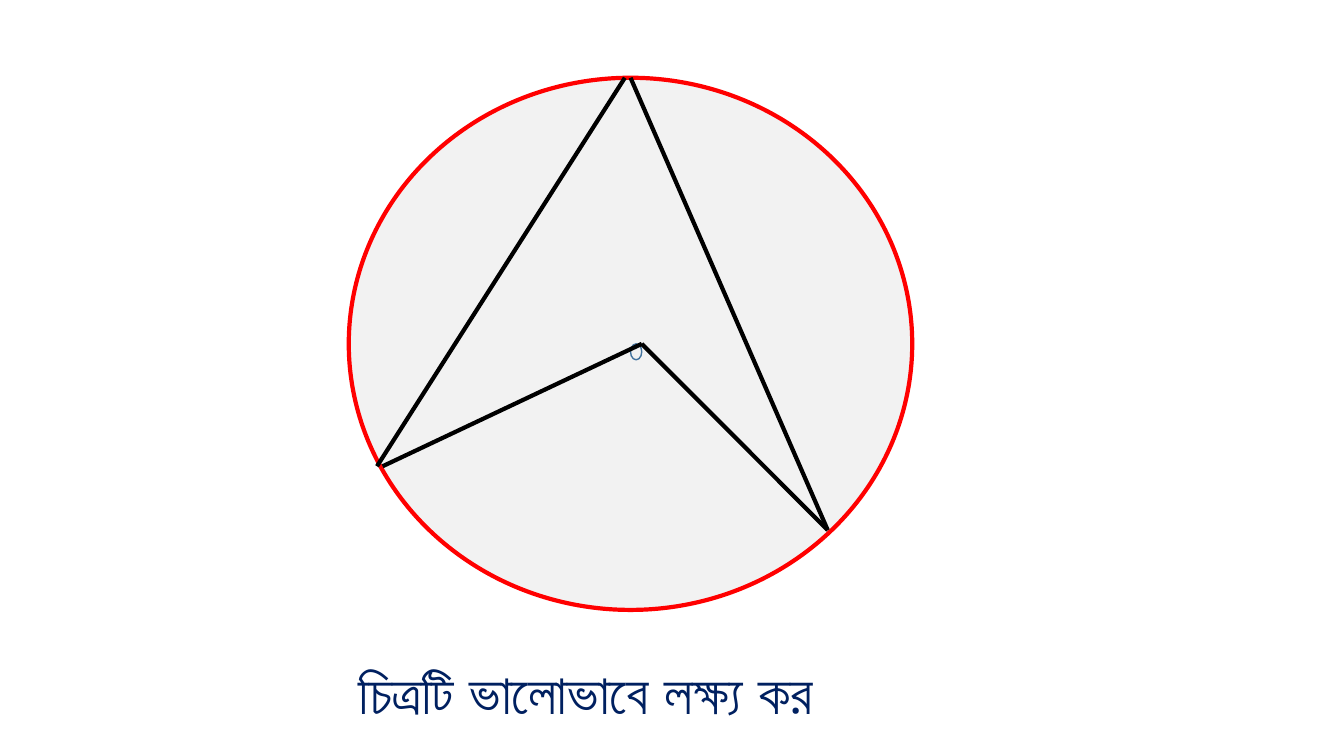
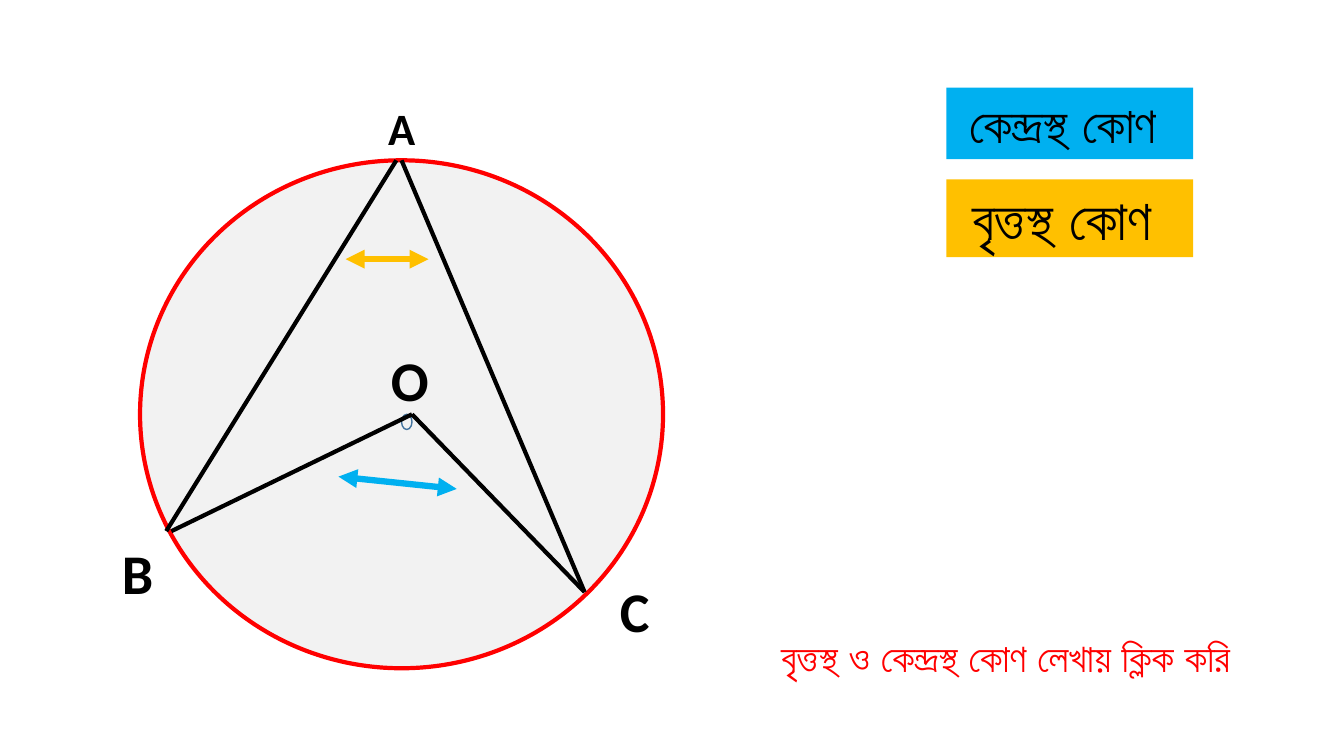
from pptx import Presentation
from pptx.dml.color import RGBColor
from pptx.enum.shapes import MSO_CONNECTOR, MSO_SHAPE
from pptx.enum.text import MSO_ANCHOR, MSO_AUTO_SIZE, PP_ALIGN
from pptx.oxml.ns import qn
from pptx.util import Cm, Pt
from lxml.etree import SubElement

FONT = "Calibri"
BLACK, RED, NAVY = "000000", "FF0000", "002060"
GREY, STEEL = "F2F2F2", "43739E"
SKY, GOLD = "00B0F0", "FFC000"


def color(hex_code):
    """Turn a hex string into a colour."""
    return RGBColor.from_string(hex_code)


def write(shape, text, size, ink=BLACK, align=PP_ALIGN.LEFT):
    """Put one bold line of text in a shape."""
    frame = shape.text_frame
    frame.text = text
    frame.word_wrap = True
    frame.auto_size = MSO_AUTO_SIZE.SHAPE_TO_FIT_TEXT
    frame.vertical_anchor = MSO_ANCHOR.TOP
    line = frame.paragraphs[0]
    line.alignment = align
    font = line.runs[0].font
    font.name, font.size, font.bold = FONT, Pt(size), True
    font.color.rgb = color(ink)


def caption(slide, box, text, size, ink):
    """Move the title placeholder to a box and fill it."""
    title = slide.shapes.title
    title.left, title.top, title.width, title.height = map(Cm, box)
    write(title, text, size, ink)


def solid(slide, kind, box, fill, edge=None, width=0):
    """Draw a filled shape with an optional outline."""
    shape = slide.shapes.add_shape(kind, *map(Cm, box))
    shape.shadow.inherit = False
    shape.fill.solid()
    shape.fill.fore_color.rgb = color(fill)
    if edge:
        shape.line.color.rgb = color(edge)
        shape.line.width = Pt(width)
    else:
        shape.line.fill.background()
    return shape


def stroke(slide, start, end, ink=BLACK, width=3, heads=False):
    """Draw a straight line, with arrowheads at both ends if asked."""
    link = slide.shapes.add_connector(
        MSO_CONNECTOR.STRAIGHT, *map(Cm, (*start, *end)))
    link.line.color.rgb = color(ink)
    link.line.width = Pt(width)
    if heads:
        for tag in ("a:headEnd", "a:tailEnd"):
            SubElement(link.line._get_or_add_ln(), qn(tag), type="triangle")
    SubElement(link._element.spPr, qn("a:effectLst"))


def circle(slide, box):
    """Draw the circle with its inscribed and central angles."""
    left, top, width, height = box

    def spot(across, down):
        """Find a point from its share of the box."""
        return left + across * width, top + down * height

    solid(slide, MSO_SHAPE.OVAL, box, GREY, RED, 3)
    core, right = spot(0.52, 0.5), spot(0.85, 0.85)
    stroke(slide, spot(0.05, 0.73), spot(0.49, 0))
    stroke(slide, spot(0.5, 0), right)
    dot = (*spot(0.5, 0.5), 0.02 * width, 0.03 * height)
    solid(slide, MSO_SHAPE.OVAL, dot, GREY, STEEL, 1)
    stroke(slide, spot(0.06, 0.73), core)
    stroke(slide, core, right)


def labels(slide, box):
    """Name the points and mark both angles of the circle."""
    left, top = box[:2]
    for name, across, down, width, size in (
            ("A", 6, -1.63, 1.4, 32), ("B", -0.71, 9.4, 1.98, 40),
            ("C", 11.84, 10.36, 1.73, 40), ("O", 6.07, 4.55, 1.98, 40)):
        place = (left + across, top + down, width, size * 0.05)
        write(slide.shapes.add_textbox(*map(Cm, place)), name, size)
    for ink, x1, y1, x2, y2 in ((GOLD, 5.18, 2.49, 7.27, 2.49),
                                (SKY, 5, 7.97, 7.98, 8.28)):
        stroke(slide, (left + x1, top + y1), (left + x2, top + y2),
               ink, 4.5, True)


def legend(slide, box):
    """Stack the two coloured angle names in a box."""
    left, top, width, gap = box
    for text, size, fill, height in (("কেন্দ্রস্থ কোণ ", 36, SKY, 1.8),
                                     ("বৃত্তস্থ কোণ ", 40, GOLD, 1.96)):
        bar = solid(slide, MSO_SHAPE.RECTANGLE, (left, top, width, height), fill)
        write(bar, text, size, align=PP_ALIGN.CENTER)
        top += height + gap


def main():
    """Build both slides and save them."""
    deck = Presentation()
    deck.slide_width, deck.slide_height = Cm(33.87), Cm(19.05)
    look, name = [deck.slides.add_slide(deck.slide_layouts[5])
                  for _ in range(2)]

    circle(look, (8.79, 1.96, 14.2, 13.41))
    caption(look, (8.79, 16.46, 13.77, 1.96),
            "চিত্রটি ভালোভাবে লক্ষ্য কর", 40, NAVY)

    ring = (3.53, 4.04, 13.18, 12.8)
    circle(name, ring)
    labels(name, ring)
    legend(name, (23.85, 2.21, 6.22, 0.51))
    caption(name, (19.43, 15.82, 13.41, 1.45),
            "বৃত্তস্থ ও কেন্দ্রস্থ কোণ লেখায় ক্লিক করি", 28, RED)
    deck.save("out.pptx")


if __name__ == "__main__":
    main()
